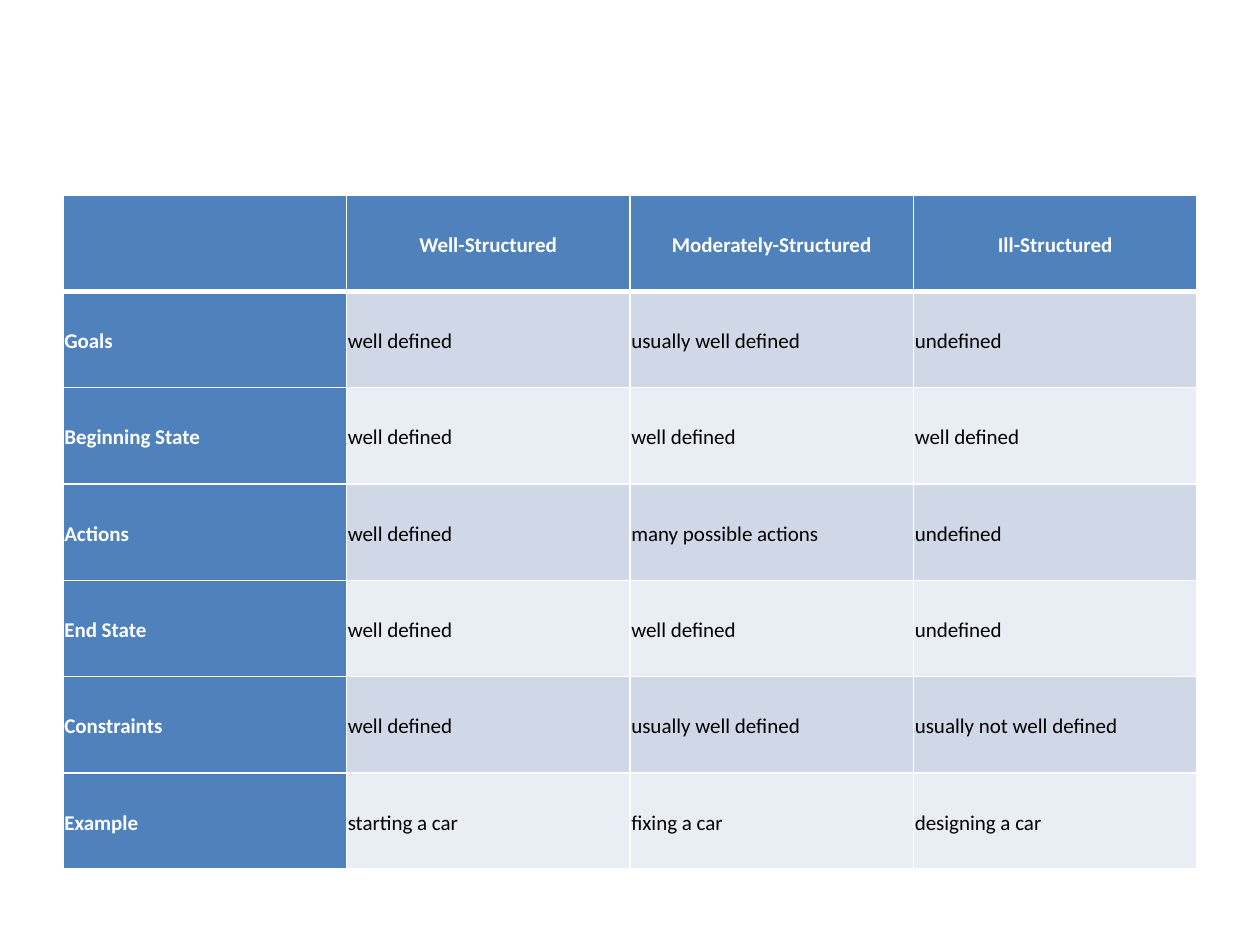
from lxml.etree import SubElement
from pptx import Presentation
from pptx.dml.color import RGBColor
from pptx.enum.text import MSO_ANCHOR, PP_ALIGN
from pptx.oxml.ns import qn
from pptx.util import Pt

ROWS = [
    ["", "Well-Structured", "Moderately-Structured", "Ill-Structured"],
    ["Goals", "well defined", "usually well defined", "undefined"],
    ["Beginning State", "well defined", "well defined", "well defined"],
    ["Actions", "well defined", "many possible actions", "undefined"],
    ["End State", "well defined", "well defined", "undefined"],
    ["Constraints", "well defined", "usually well defined", "usually not well defined"],
    ["Example", "starting a car", "fixing a car", "designing a car"],
]
HEADING_FILL = "4F81BD"
BAND_FILLS = ["E9EDF4", "D0D8E8"]
WHITE = "FFFFFF"
BLACK = "000000"


def color(value):
    return RGBColor.from_string(value)


def set_borders(cell, top, bottom):
    properties = cell._tc.get_or_add_tcPr()
    for side, width in (("L", 1), ("R", 1), ("T", top), ("B", bottom)):
        line = SubElement(properties, qn(f"a:ln{side}"), w=str(Pt(width)))
        fill = SubElement(line, qn("a:solidFill"))
        SubElement(fill, qn("a:srgbClr"), val=WHITE)


def style_cell(cell, text, row, column):
    is_heading = row == 0 or column == 0
    set_borders(cell, 3 if row == 1 else 1, 3 if row == 0 else 1)
    cell.fill.solid()
    cell.fill.fore_color.rgb = color(HEADING_FILL if is_heading else BAND_FILLS[row % 2])
    cell.vertical_anchor = MSO_ANCHOR.MIDDLE
    cell.margin_left = cell.margin_right = Pt(0.75)
    cell.margin_top = cell.margin_bottom = Pt(0.75)
    cell.text = text
    paragraph = cell.text_frame.paragraphs[0]
    paragraph.alignment = PP_ALIGN.CENTER if row == 0 else PP_ALIGN.LEFT
    paragraph.line_spacing = 1.15
    paragraph.font.name = "Calibri"
    paragraph.font.size = Pt(12)
    paragraph.font.bold = is_heading
    paragraph.font.color.rgb = color(WHITE if is_heading else BLACK)


def add_problem_table(page):
    frame = page.shapes.add_table(
        len(ROWS), len(ROWS[0]), Pt(36), Pt(111.5), Pt(648), Pt(385.2)
    )
    for row, texts in enumerate(ROWS):
        for column, text in enumerate(texts):
            style_cell(frame.table.cell(row, column), text, row, column)


def main():
    deck = Presentation()
    deck.slide_width = Pt(720)
    deck.slide_height = Pt(540)
    page = deck.slides.add_slide(deck.slide_layouts[6])
    add_problem_table(page)
    deck.save("out.pptx")


if __name__ == "__main__":
    main()
